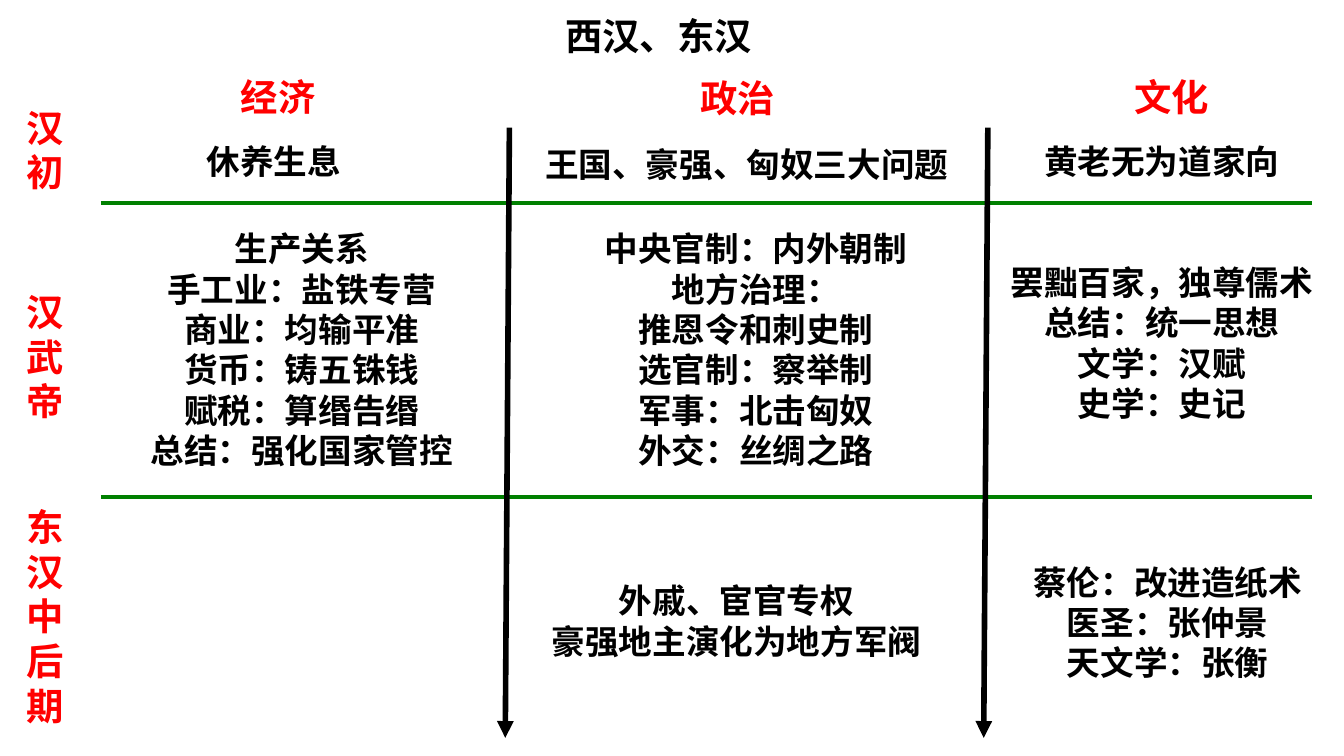
from lxml.etree import SubElement as Sub
from pptx import Presentation
from pptx.dml.color import RGBColor as RGB
from pptx.enum.shapes import MSO_CONNECTOR as Conn
from pptx.enum.text import MSO_AUTO_SIZE as Auto, PP_ALIGN as Align
from pptx.oxml.ns import qn
from pptx.util import Pt

COLORS = {"head": "FF0000", "body": "000000", "rule": "008000"}
CJK = "Noto Sans CJK SC"
HEAD = {"name": CJK, "size": Pt(20), "bold": True}
BODY = {"name": "Calibri", "size": Pt(18), "bold": True}

# Column heads: text, left, top
HEADS = [("经济", 121.7, 36), ("政治", 367.9, 36.7), ("文化", 600.5, 36)]

# Eras down the left edge: text, top, width, height
ERAS = [
    ("汉初", 52.6, 36.7, 55.4),
    ("汉武帝", 151.2, 35.3, 79.9),
    ("东汉中后期", 266.4, 35.3, 128.2),
]

# Cells: left, top, width, lines
CELLS = [
    (103, 72, 87.1, ["休养生息"]),
    (283.7, 73.4, 232.6, ["王国、豪强、匈奴三大问题"]),
    (551.5, 72, 141.8, ["黄老无为道家向"]),
    (72, 118.8, 179.3, ["生产关系", "手工业：盐铁专营", "商业：均输平准",
                        "货币：铸五铢钱", "赋税：算缗告缗", "总结：强化国家管控"]),
    (316.1, 118.8, 177.8, ["中央官制：内外朝制", "地方治理：", "推恩令和刺史制",
                           "选官制：察举制", "军事：北击匈奴", "外交：丝绸之路"]),
    (532.8, 136.8, 179.3, ["罢黜百家，独尊儒术", "总结：统一思想",
                           "文学：汉赋", "史学：史记"]),
    (283.7, 307.4, 221.8, ["外戚、宦官专权", "豪强地主演化为地方军阀"]),
    (545, 297.4, 161.3, ["蔡伦：改进造纸术", "医圣：张仲景", "天文学：张衡"]),
]


def add_text(slide, lines, place, form, color, wrap=False, align=Align.CENTER):
    box = slide.shapes.add_textbox(*map(Pt, place))
    frame = box.text_frame
    frame.word_wrap = wrap
    frame.auto_size = Auto.SHAPE_TO_FIT_TEXT
    frame.text = "\n".join(lines)
    for para in frame.paragraphs:
        para.alignment = align
        for run in para.runs:
            for key, val in form.items():
                setattr(run.font, key, val)
            run.font.color.rgb = RGB.from_string(COLORS[color])
            Sub(run.font._element, qn("a:ea"), typeface=CJK)


def add_line(slide, start, end, color, width, arrow=False):
    line = slide.shapes.add_connector(Conn.STRAIGHT, *map(Pt, start + end))
    line.line.color.rgb = RGB.from_string(COLORS[color])
    line.line.width = Pt(width)
    props = line._element.spPr
    if arrow:
        Sub(props.find(qn("a:ln")), qn("a:tailEnd"), type="triangle")
    Sub(props, qn("a:effectLst"))


def main():
    deck = Presentation()
    deck.slide_width, deck.slide_height = Pt(720), Pt(405)
    slide = deck.slides.add_slide(deck.slide_layouts[6])

    # Title
    add_text(slide, ["西汉、东汉"], (294.5, 3.6, 116.6, 31.7), HEAD, "body")

    # Rules between eras
    for y in (108.7, 266.4):
        add_line(slide, (54, y), (702.7, y), "rule", 2)

    # Era labels, one character to a line
    for text, top, width, height in ERAS:
        add_text(slide, [text], (7.2, top, width, height), HEAD, "head",
                 wrap=True, align=Align.LEFT)

    # Column heads
    for text, left, top in HEADS:
        add_text(slide, [text], (left, top, 54.7, 31.7), HEAD, "head")

    # Arrows between columns
    for x in (272.9, 529.2):
        add_line(slide, (x, 68.4), (x - 2.2, 395.3), "body", 3, arrow=True)

    # Cell text
    for left, top, width, lines in CELLS:
        height = 7.2 + 21.8 * len(lines)
        add_text(slide, lines, (left, top, width, height), BODY, "body")

    deck.save("out.pptx")


if __name__ == "__main__":
    main()
